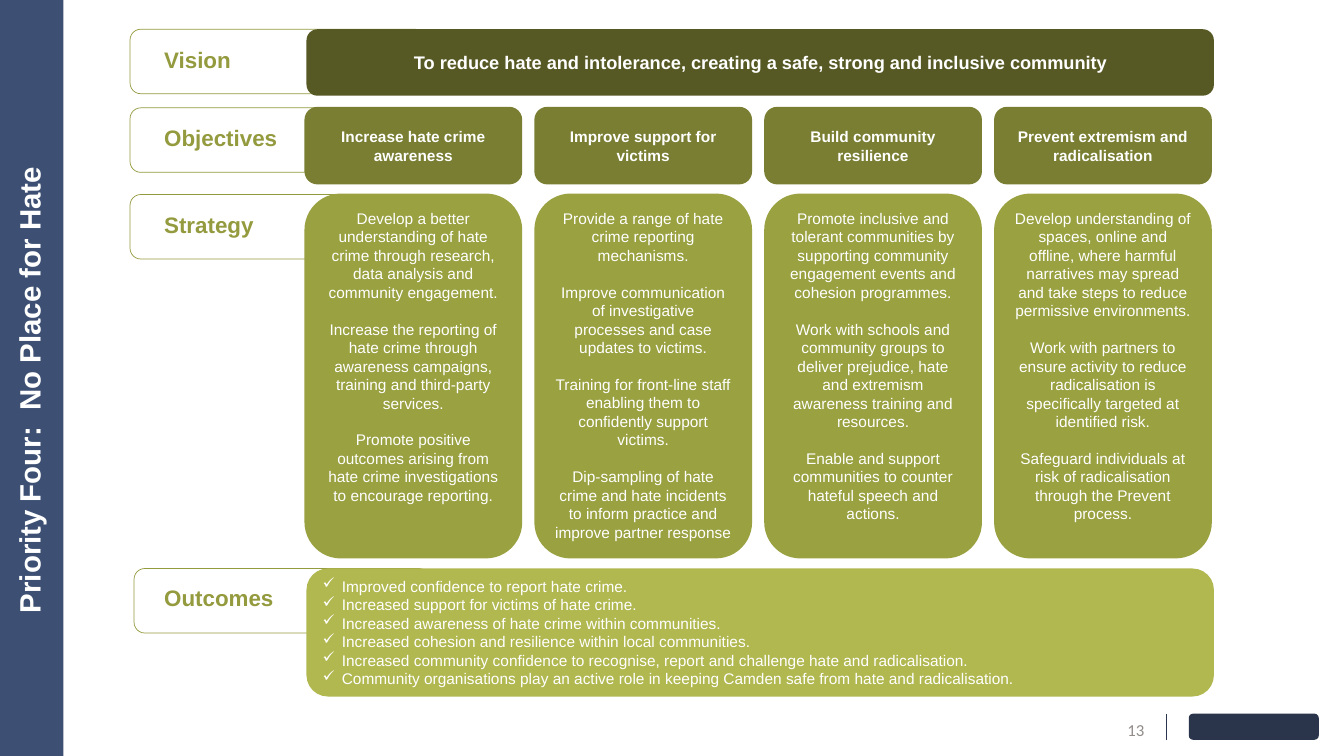
from lxml import etree
from pptx import Presentation
from pptx import util as u
from pptx.dml.color import RGBColor
from pptx.enum import shapes, text
from pptx.oxml import ns

Inches = u.Inches
MIDDLE, TOP = text.MSO_ANCHOR.MIDDLE, text.MSO_ANCHOR.TOP
CENTER, LEFT, RIGHT = text.PP_ALIGN.CENTER, text.PP_ALIGN.LEFT, text.PP_ALIGN.RIGHT


def write(shape, lines, size=11, color="FFFFFF", bold=False, font="Arial", align=CENTER,
          anchor=MIDDLE, spacing=None, gap=0, bullet=None):
    frame = shape.text_frame
    frame.word_wrap = True
    frame.auto_size = text.MSO_AUTO_SIZE.NONE
    frame.vertical_anchor = anchor
    for index, line in enumerate(lines):
        paragraph = frame.add_paragraph() if index else frame.paragraphs[0]
        paragraph.alignment = align
        paragraph.line_spacing = spacing
        paragraph.space_before = u.Pt(gap if index else 0)
        run = paragraph.add_run()
        run.text = line
        run.font.name = font
        run.font.size = u.Pt(size)
        run.font.bold = bold
        run.font.color.rgb = RGBColor.from_string(color)
        if bullet:
            properties = paragraph._p.get_or_add_pPr()
            properties.set("marL", str(Inches(0.19)))
            properties.set("indent", str(Inches(-0.19)))
            etree.SubElement(properties, ns.qn("a:buChar")).set("char", bullet)


def add_box(left, top, width, height, fill=None, line=None, kind=shapes.MSO_SHAPE.ROUNDED_RECTANGLE):
    shape = slide.shapes.add_shape(kind, Inches(left), Inches(top), Inches(width), Inches(height))
    shape.shadow.inherit = False
    if fill:
        shape.fill.solid()
        shape.fill.fore_color.rgb = RGBColor.from_string(fill)
    else:
        shape.fill.background()
    if line:
        shape.line.color.rgb = RGBColor.from_string(line)
        shape.line.width = u.Pt(0.5)
    else:
        shape.line.fill.background()
    return shape


presentation = Presentation()
presentation.slide_width = Inches(13.33)
presentation.slide_height = Inches(7.5)
slide = presentation.slides.add_slide(presentation.slide_layouts[5])

add_box(0, 0, 0.63, 7.5, "3D5073", kind=shapes.MSO_SHAPE.RECTANGLE)

title = slide.shapes.title
title.left, title.top = Inches(-3.11), Inches(3.32)
title.width, title.height = Inches(7.44), Inches(0.92)
title.rotation = 270
write(title, ["Priority Four:  No Place for Hate "], size=21, bold=True, anchor=TOP, spacing=0.9)
title.text_frame.margin_left = title.text_frame.margin_top = title.text_frame.margin_bottom = 0
title.text_frame.margin_right = Inches(0.1)
slide.shapes.element.append(title.element)

labels = [
    ("Vision", 1.29, 0.29, 0.44),
    ("Objectives", 1.29, 1.07, 1.21),
    ("Strategy", 1.29, 1.93, 2.08),
    ("Outcomes", 1.33, 5.64, 5.78),
]
for label, left, top, text_top in labels:
    add_box(left, top, 2.93, 0.64, line="949A3E")
    label_box = slide.shapes.add_textbox(Inches(1.53), Inches(text_top), Inches(1.59), Inches(0.34))
    write(label_box, [label], size=16, color="949A3E", bold=True, align=LEFT, anchor=TOP, spacing=0.9)

vision = add_box(3.04, 0.29, 9, 0.66, "575925")
write(vision, ["To reduce hate and intolerance, creating a safe, strong and inclusive community"],
      size=13, bold=True)

columns = [
    ("Increase hate crime awareness", [
        "Develop a better understanding of hate crime through research, data analysis and community engagement.",
        "Increase the reporting of hate crime through awareness campaigns, training and third-party services.",
        "Promote positive outcomes arising from hate crime investigations to encourage reporting.",
    ]),
    ("Improve support for victims", [
        "Provide a range of hate crime reporting mechanisms.",
        "Improve communication of investigative processes and case updates to victims.",
        "Training for front-line staff enabling them to confidently support victims.",
        "Dip-sampling of hate crime and hate incidents to inform practice and improve partner response",
    ]),
    ("Build community resilience", [
        "Promote inclusive and tolerant communities by supporting community engagement events and "
        "cohesion programmes.",
        "Work with schools and community groups to deliver prejudice, hate and extremism awareness "
        "training and resources.",
        "Enable and support communities to counter hateful speech and actions.",
    ]),
    ("Prevent extremism and radicalisation", [
        "Develop understanding of spaces, online and offline, where harmful narratives may spread and "
        "take steps to reduce permissive environments.",
        "Work with partners to ensure activity to reduce radicalisation is specifically targeted at "
        "identified risk.",
        "Safeguard individuals at risk of radicalisation through the Prevent process.",
    ]),
]
for index, (objective, strategies) in enumerate(columns):
    left = 3.02 + 2.28 * index
    write(add_box(left, 1.06, 2.16, 0.77, "797E32"), [objective], bold=True)
    write(add_box(left, 1.92, 2.16, 3.62, "9AA141"), strategies, anchor=TOP, gap=13)

outcomes = add_box(3.04, 5.64, 9, 1.27, "B1B850")
write(outcomes, [
    "Improved confidence to report hate crime.",
    "Increased support for victims of hate crime.",
    "Increased awareness of hate crime within communities.",
    "Increased cohesion and resilience within local communities.",
    "Increased community confidence to recognise, report and challenge hate and radicalisation.",
    "Community organisations play an active role in keeping Camden safe from hate and radicalisation.",
], align=LEFT, bullet="✓")

page_number = slide.shapes.add_textbox(Inches(10.69), Inches(7.04), Inches(0.76), Inches(0.4))
write(page_number, ["13"], size=12, color="918C8A", font="Calibri", align=RIGHT)

divider = slide.shapes.add_connector(shapes.MSO_CONNECTOR.STRAIGHT, Inches(11.57), Inches(7.08),
                                     Inches(11.57), Inches(7.34))
divider.line.color.rgb = RGBColor.from_string("2A354D")
divider.line.width = u.Pt(0.5)
etree.SubElement(divider.element.spPr, ns.qn("a:effectLst"))

add_box(11.79, 7.08, 1.29, 0.26, "2A354C")

presentation.save("out.pptx")
